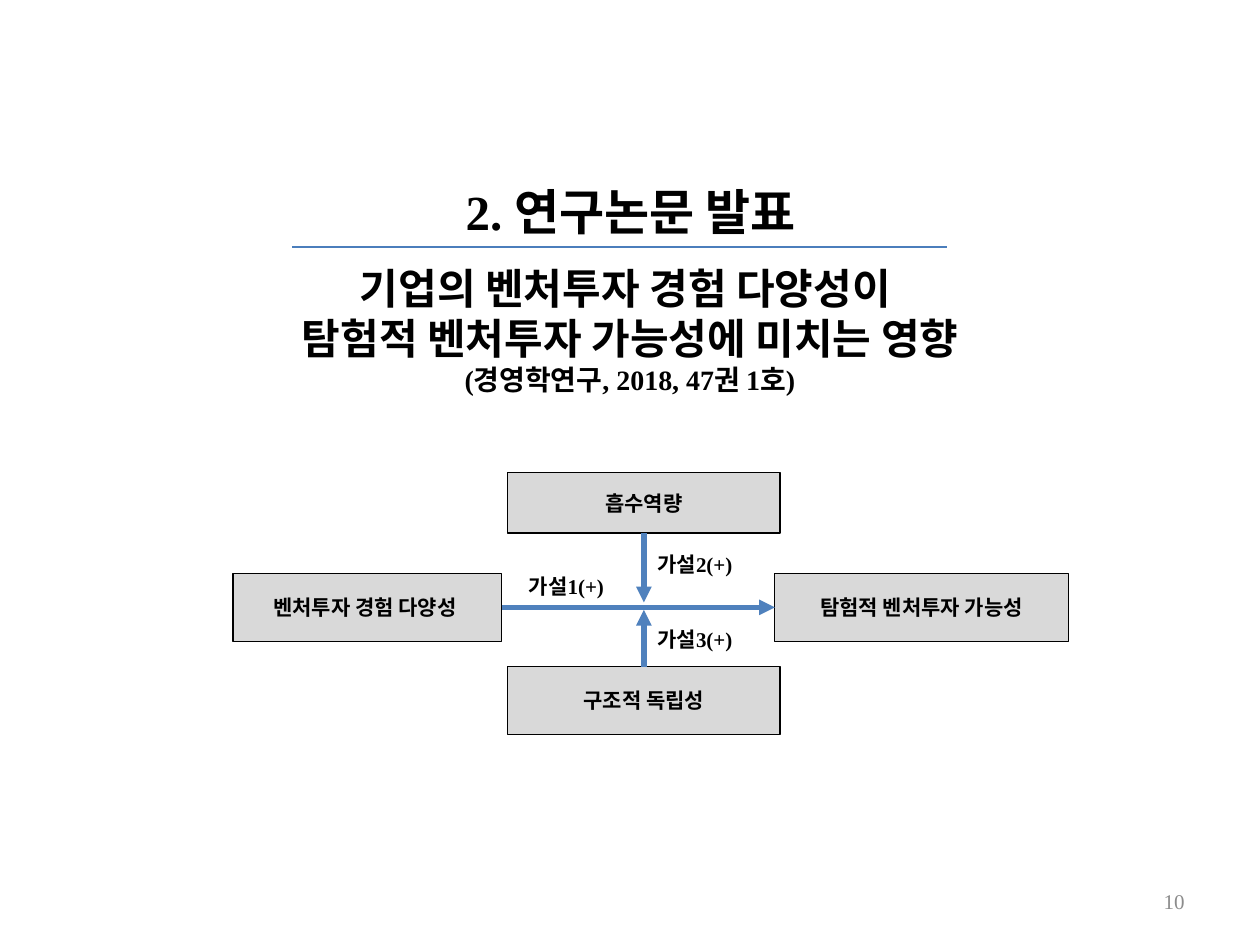
from lxml.etree import SubElement
from pptx import Presentation
from pptx.dml.color import RGBColor
from pptx.enum.shapes import MSO_CONNECTOR, MSO_SHAPE
from pptx.enum.text import MSO_ANCHOR, MSO_AUTO_SIZE, PP_ALIGN
from pptx.oxml.ns import qn
from pptx.util import Pt


def color(value):
    return RGBColor.from_string(value)


class SlideBuilder:
    """Draw styled elements on the current slide, with lengths in points."""

    font_name = "Times New Roman"
    box_fill = "D9D9D9"
    text_color = "000000"

    def __init__(self, slide):
        self.slide = slide

    def fill_text(self, shape, lines, align=PP_ALIGN.CENTER, anchor=MSO_ANCHOR.MIDDLE,
                  wrap=True, bold=True, text_color=text_color):
        frame = shape.text_frame
        frame_format = {"word_wrap": wrap, "auto_size": MSO_AUTO_SIZE.NONE,
                        "vertical_anchor": anchor}
        for name, value in frame_format.items():
            setattr(frame, name, value)
        paragraph = frame.paragraphs[0]
        paragraph.alignment = align
        paragraph.space_before = Pt(0)
        for index, (text, size) in enumerate(lines):
            if index:
                paragraph.add_line_break()
            run = paragraph.add_run()
            run.text = text
            font_format = {"name": self.font_name, "size": Pt(size), "bold": bold}
            for name, value in font_format.items():
                setattr(run.font, name, value)
            run.font.color.rgb = color(text_color)

    def placeholder(self, index, bounds, lines):
        shape = self.slide.placeholders[index]
        for name, value in zip(("left", "top", "width", "height"), bounds):
            setattr(shape, name, Pt(value))
        self.fill_text(shape, lines, anchor=MSO_ANCHOR.TOP, wrap=False)

    def label(self, bounds, text, **text_format):
        shape = self.slide.shapes.add_textbox(*map(Pt, bounds))
        self.fill_text(shape, [(text, 12)], **text_format)

    def box(self, bounds, text):
        shape = self.slide.shapes.add_shape(MSO_SHAPE.RECTANGLE, *map(Pt, bounds))
        shape.shadow.inherit = False
        shape.fill.solid()
        shape.fill.fore_color.rgb = color(self.box_fill)
        shape.line.color.rgb = color(self.text_color)
        shape.line.width = Pt(0.75)
        self.fill_text(shape, [(text, 12)])

    def line(self, points, line_color, width, arrow=False):
        connector = self.slide.shapes.add_connector(MSO_CONNECTOR.STRAIGHT, *map(Pt, points))
        connector.line.color.rgb = color(line_color)
        connector.line.width = Pt(width)
        properties = connector._element.spPr
        if arrow:
            SubElement(properties.get_or_add_ln(), qn("a:tailEnd"), type="triangle")
        SubElement(properties, qn("a:effectLst"))


def main():
    presentation = Presentation()
    presentation.slide_width, presentation.slide_height = Pt(720), Pt(540)
    builder = SlideBuilder(presentation.slides.add_slide(presentation.slide_layouts[0]))

    builder.label((516.2, 500.4, 167.8, 28.8), "10", align=PP_ALIGN.RIGHT,
                  bold=False, text_color="8C8C8C")
    builder.placeholder(0, (247, 100, 226.8, 41), [("2. 연구논문 발표", 28)])
    builder.line((167, 141.1, 541.4, 141.1), "4B7EBC", 0.75)
    builder.placeholder(1, (146.9, 146.2, 426.2, 85), [
        ("기업의 벤처투자 경험 다양성이 ", 24),
        ("탐험적 벤처투자 가능성에 미치는 영향", 24),
        ("(경영학연구, 2018, 47권 1호)", 16),
    ])

    side_top, box_height = 327.6, 38.9
    cause_left, cause_width, effect_left = 133.2, 153.4, 442.8
    moderator_left, moderator_width = 290.2, 155.5
    upper_top, upper_height, lower_top = 270, 34.6, 380.9
    boxes = [
        ((cause_left, side_top, cause_width, box_height), "벤처투자 경험 다양성 "),
        ((effect_left, side_top, 167.8, box_height), "탐험적 벤처투자 가능성"),
        ((moderator_left, lower_top, moderator_width, box_height), "구조적 독립성"),
        ((moderator_left, upper_top, moderator_width, upper_height), "흡수역량"),
    ]
    for bounds, text in boxes:
        builder.box(bounds, text)

    hypotheses = [(295.2, 318.2), (368.6, 306), (368.6, 348.5)]
    for number, (left, top) in enumerate(hypotheses, start=1):
        builder.label((left, top, 64.8, 33.1), f"가설{number}(+)", align=PP_ALIGN.LEFT)

    middle_x = moderator_left + moderator_width / 2
    middle_y = side_top + box_height / 2
    arrows = [
        (cause_left + cause_width, middle_y, effect_left, middle_y),
        (middle_x, lower_top, middle_x, middle_y + 1.5),
        (middle_x, upper_top + upper_height, middle_x, middle_y - 2.8),
    ]
    for points in arrows:
        builder.line(points, "4F81BD", 3, arrow=True)

    presentation.save("out.pptx")


if __name__ == "__main__":
    main()
